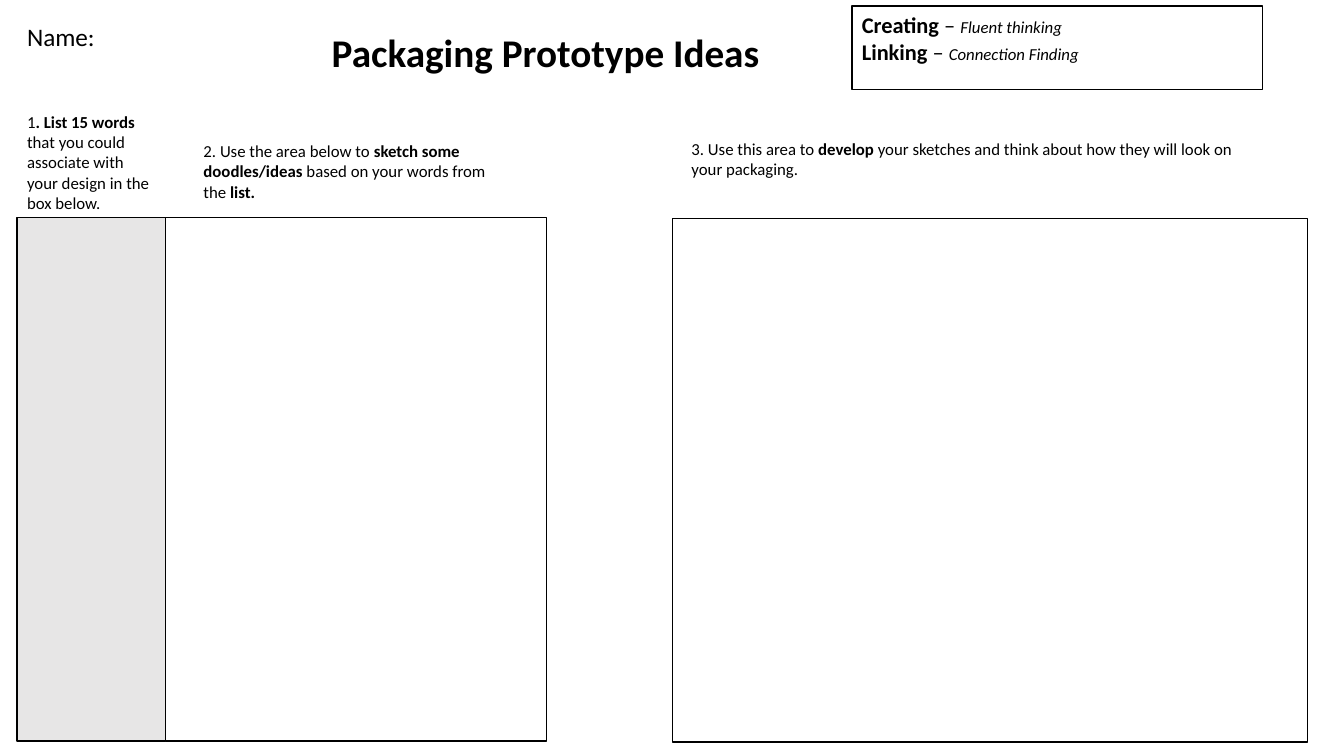
import pptx
import pptx.dml.color
import pptx.enum.shapes
import pptx.enum.text
import pptx.util

Inches = pptx.util.Inches
BLACK = pptx.dml.color.RGBColor(0x00, 0x00, 0x00)
LIGHT_GREY = pptx.dml.color.RGBColor(0xE7, 0xE6, 0xE6)
BOLD = {"bold": True}
SMALL_ITALIC = {"italic": True, "size": pptx.util.Pt(12)}


class Worksheet:
    """Hold the worksheet style and the slide that is being built."""

    def __init__(self, presentation):
        self.slide = presentation.slides.add_slide(presentation.slide_layouts[5])
        self.font_name = "Calibri"
        self.line_width = pptx.util.Pt(1)

    def fill_text(self, shape, paragraphs, size):
        frame = shape.text_frame
        frame_format = {
            "word_wrap": True,
            "auto_size": pptx.enum.text.MSO_AUTO_SIZE.NONE,
            "vertical_anchor": pptx.enum.text.MSO_ANCHOR.TOP,
        }
        for name, value in frame_format.items():
            setattr(frame, name, value)
        for index, runs in enumerate(paragraphs):
            paragraph = frame.add_paragraph() if index else frame.paragraphs[0]
            paragraph.alignment = pptx.enum.text.PP_ALIGN.LEFT
            for text, changes in runs:
                run = paragraph.add_run()
                run.text = text
                run.font.color.rgb = BLACK
                font_format = {"name": self.font_name, "size": pptx.util.Pt(size), **changes}
                for name, value in font_format.items():
                    setattr(run.font, name, value)

    def title(self, text, left, top, width, height, size):
        title = self.slide.shapes.title
        position = {"left": left, "top": top, "width": width, "height": height}
        for name, value in position.items():
            setattr(title, name, Inches(value))
        self.fill_text(title, [[(text, BOLD)]], size)

    def text(self, paragraphs, left, top, width, height, size=12):
        box = self.slide.shapes.add_textbox(
            Inches(left), Inches(top), Inches(width), Inches(height))
        self.fill_text(box, paragraphs, size)

    def frame(self, left, top, width, height, fill=None):
        shape = self.slide.shapes.add_shape(
            pptx.enum.shapes.MSO_SHAPE.RECTANGLE,
            Inches(left), Inches(top), Inches(width), Inches(height))
        shape.shadow.inherit = False
        if fill is None:
            shape.fill.background()
        else:
            shape.fill.solid()
            shape.fill.fore_color.rgb = fill
        shape.line.color.rgb = BLACK
        shape.line.width = self.line_width


def main():
    presentation = pptx.Presentation()
    presentation.slide_width = Inches(13.33)
    presentation.slide_height = Inches(7.5)
    sheet = Worksheet(presentation)

    sheet.title("Packaging Prototype Ideas", 3.19, 0.23, 5.72, 0.57, 28)
    sheet.text([[("Name:", {})]], 0.17, 0.16, 3.34, 0.4, 18)

    skills = [("Creating", "Fluent thinking"), ("Linking", "Connection Finding")]
    sheet.text(
        [[(skill, BOLD), (" – ", {}), (detail, SMALL_ITALIC)] for skill, detail in skills],
        8.45, 0.06, 2.73, 0.91, 16)
    sheet.frame(8.45, 0.06, 4.07, 0.83)

    sheet.frame(0.17, 2.16, 1.47, 5.19, LIGHT_GREY)
    sheet.text(
        [[("1", {}), (". List 15 words ", BOLD),
          ("that you could associate with your design in the box below.", {})]],
        0.17, 1.06, 1.49, 1.11)

    sheet.frame(1.64, 2.16, 3.78, 5.19)
    sheet.text(
        [[("2. Use the area below to ", {}), ("sketch some doodles/ideas", BOLD),
          (" based on your words from the ", {}), ("list.", BOLD)]],
        1.92, 1.35, 3.24, 0.71)

    sheet.frame(6.67, 2.17, 6.3, 5.19)
    sheet.text(
        [[("3. Use this area to ", {}), ("develop", BOLD),
          (" your sketches and think about how they will look on your packaging.", {})]],
        6.76, 1.33, 5.66, 0.5)

    presentation.save("out.pptx")


if __name__ == "__main__":
    main()
